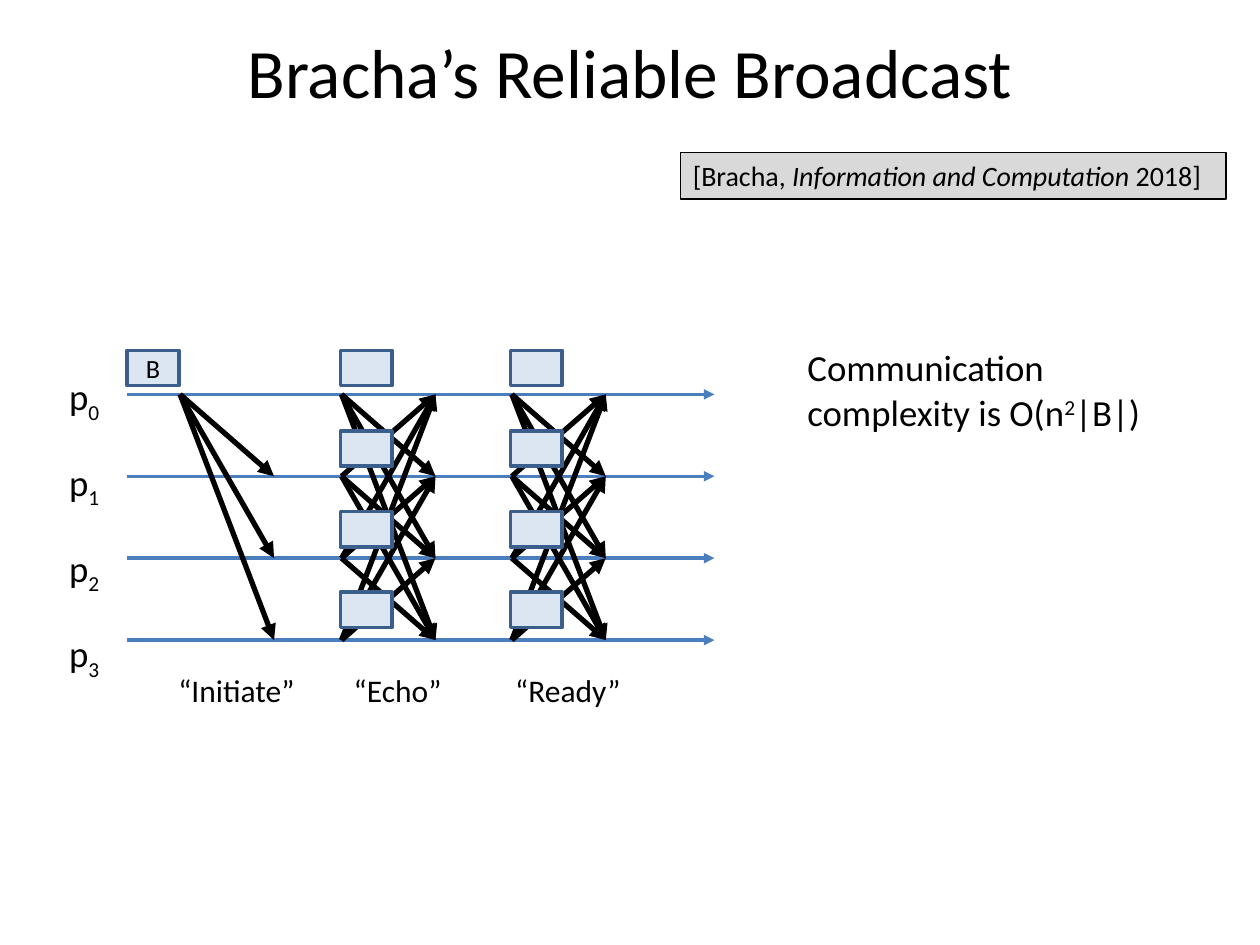
import pptx
import pptx.util
import pptx.dml.color
import pptx.enum.shapes
import pptx.enum.text
import pptx.oxml
import pptx.oxml.ns

INK, BLUE, NAVY, PALE, GREY = "000000", "4B7EBC", "3A5F8C", "DCE6F2", "D9D9D9"
PROCESSES = 4
ROUNDS = [("“Initiate”", 0.09, 1.13), ("“Echo”", 0.365, 0.91), ("“Ready”", 0.655, 1.05)]
TRAVEL = 0.16
BLOCK = (0.41, 0.28)


def inches(*lengths):
    """Convert lengths in inches to slide units."""
    return [pptx.util.Inches(length) for length in lengths]


def colour(value):
    """Turn a hex string into a colour."""
    return pptx.dml.color.RGBColor.from_string(value)


def write(frame, parts, size):
    """Fill the first paragraph with (text, baseline percent, italic) parts."""
    para = frame.paragraphs[0]
    for text, baseline, italic in parts:
        span = para.add_run()
        span.text = text
        span.font.size = pptx.util.Pt(size)
        span.font.name = "Calibri"
        span.font.color.rgb = colour(INK)
        if italic:
            span.font.italic = True
        if baseline:
            span._r.get_or_add_rPr().set("baseline", str(baseline * 1000))
    return para


def add_text(page, box, parts, size, wrap=False):
    """Add a text box that grows with its text."""
    frame = page.shapes.add_textbox(*inches(*box)).text_frame
    frame.word_wrap = wrap
    frame.auto_size = pptx.enum.text.MSO_AUTO_SIZE.SHAPE_TO_FIT_TEXT
    write(frame, parts, size)


def add_rectangle(page, box, fill, line, weight):
    """Add a flat outlined rectangle."""
    shape = page.shapes.add_shape(pptx.enum.shapes.MSO_SHAPE.RECTANGLE, *inches(*box))
    shape.shadow.inherit = False
    shape.fill.solid()
    shape.fill.fore_color.rgb = colour(fill)
    shape.line.color.rgb = colour(line)
    shape.line.width = pptx.util.Pt(weight)
    return shape


def add_arrow(page, start, end, line, weight):
    """Add a straight arrow without a shadow."""
    arrow = page.shapes.add_connector(
        pptx.enum.shapes.MSO_CONNECTOR.STRAIGHT, *inches(*start, *end))
    arrow.line.color.rgb = colour(line)
    arrow.line.width = pptx.util.Pt(weight)
    head = pptx.oxml.parse_xml(
        f'<a:tailEnd {pptx.oxml.ns.nsdecls("a")} type="triangle"/>')
    arrow.line._get_or_add_ln().append(head)
    arrow._element.spPr.append(
        pptx.oxml.parse_xml(f'<a:effectLst {pptx.oxml.ns.nsdecls("a")}/>'))


def place_title(page, box):
    """Set the title with an open second line."""
    title = page.shapes.title
    title.left, title.top, title.width, title.height = inches(*box)
    frame = title.text_frame
    frame.text = "Bracha’s Reliable Broadcast\v"
    frame.auto_size = pptx.enum.text.MSO_AUTO_SIZE.NONE
    frame.vertical_anchor = pptx.enum.text.MSO_ANCHOR.MIDDLE
    para = frame.paragraphs[0]
    para.alignment = pptx.enum.text.PP_ALIGN.CENTER
    for span in para.runs:
        span.font.size = pptx.util.Pt(39.6)
        span.font.name = "Calibri"
        span.font.color.rgb = colour(INK)


def place_timelines(page, box):
    """Draw one labelled timeline for each process."""
    left, top, width, height = box
    row = height / (PROCESSES - 1)
    for process in range(PROCESSES):
        level = top + process * row
        add_arrow(page, (left, level), (left + width, level), BLUE, 2)
        add_text(page, (left - 0.56, top - 0.21 + process * 0.68, 0.46, 0.45),
                 [("p", 0, False), (str(process), -25, False)], 21)


def place_round(page, box, number):
    """Draw the messages, blocks and caption of one broadcast round."""
    left, top, width, height = box
    caption, share, caption_width = ROUNDS[number]
    row = height / (PROCESSES - 1)
    start = left + share * width
    end = start + TRAVEL * width
    senders = range(PROCESSES if number else 1)
    for sender in senders:
        for receiver in range(PROCESSES):
            if sender != receiver:
                add_arrow(page, (start, top + sender * row),
                          (end, top + receiver * row), INK, 3)
    block_left = start - 0.01 if number else left
    for sender in senders:
        block = add_rectangle(
            page, (block_left, top - 0.35 + sender * 0.64, *BLOCK), PALE, NAVY, 2)
        if not number:
            block.text_frame.vertical_anchor = pptx.enum.text.MSO_ANCHOR.MIDDLE
            para = write(block.text_frame, [("B", 0, False)], 15)
            para.alignment = pptx.enum.text.PP_ALIGN.CENTER
    centre = (start + end) / 2 + 0.08
    add_text(page, (centre - caption_width / 2, top + height + 0.2, caption_width, 0.4),
             [(caption, 0, False)], 18)


def place_complexity(page, box):
    """State the communication cost."""
    add_text(page, box, [("Communication complexity is O(n", 0, False),
                         ("2", 30, False), ("|B|)", 0, False)], 21, wrap=True)


def place_citation(page, box):
    """Add the citation in a grey frame."""
    frame = add_rectangle(page, box, GREY, INK, 0.75).text_frame
    frame.word_wrap = True
    frame.vertical_anchor = pptx.enum.text.MSO_ANCHOR.TOP
    para = write(frame, [("[Bracha, ", 0, False),
                         ("Information and Computation ", 0, True),
                         ("2018]", 0, False)], 16)
    para.alignment = pptx.enum.text.PP_ALIGN.LEFT


def main():
    """Build and save the deck."""
    deck = pptx.Presentation()
    deck.slide_width, deck.slide_height = inches(10, 7.5)
    page = deck.slides.add_slide(deck.slide_layouts[5])
    diagram = (1.01, 3.13, 4.66, 1.95)
    place_title(page, (0.5, 0.3, 9, 1.25))
    place_timelines(page, diagram)
    for number in range(len(ROUNDS)):
        place_round(page, diagram, number)
    place_complexity(page, (6.31, 2.69, 3.31, 0.81))
    place_citation(page, (5.4, 1.21, 4.33, 0.37))
    deck.save("out.pptx")


if __name__ == "__main__":
    main()
